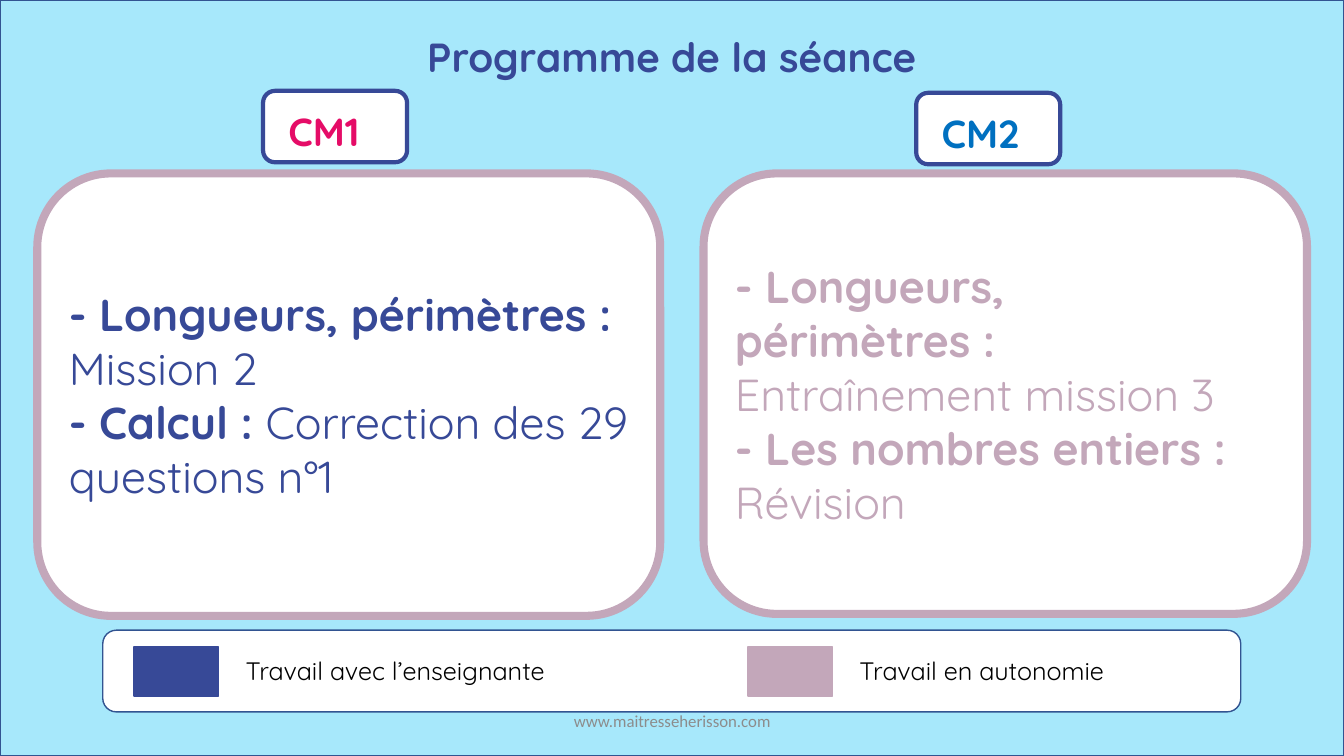
import pptx
import pptx.util
import pptx.dml.color
import pptx.enum.shapes
import pptx.enum.text

Cm = pptx.util.Cm
Pt = pptx.util.Pt
SHAPE = pptx.enum.shapes.MSO_SHAPE
ALIGN = pptx.enum.text.PP_ALIGN
ANCHOR = pptx.enum.text.MSO_ANCHOR

COLORS = {
    "sky": "A7E8FB",
    "border": "325491",
    "teacher": "374997",
    "alone": "C3A7BA",
    "white": "FFFFFF",
    "black": "000000",
    "cm1": "E50C67",
    "cm2": "0070C0",
    "footer": "8C8C8C",
}


def rgb(name):
    return pptx.dml.color.RGBColor.from_string(COLORS[name])


def add_panel(shapes, kind, box, fill, line, width):
    panel = shapes.add_shape(kind, *map(Cm, box))
    panel.shadow.inherit = False
    panel.fill.solid()
    panel.fill.fore_color.rgb = rgb(fill)
    panel.line.color.rgb = rgb(line)
    panel.line.width = Pt(width)
    return panel


def write(shape, paragraphs, color, size, align=ALIGN.LEFT, anchor=ANCHOR.TOP, font="Quicksand"):
    frame = shape.text_frame
    frame.word_wrap = True
    frame.vertical_anchor = anchor
    for index, spans in enumerate(paragraphs):
        para = frame.paragraphs[0] if index == 0 else frame.add_paragraph()
        para.alignment = align
        for text, bold in spans:
            span = para.add_run()
            span.text = text
            formats = {"name": font, "size": Pt(size), "bold": bold}
            for key, value in formats.items():
                setattr(span.font, key, value)
            span.font.color.rgb = rgb(color)


def add_label(shapes, box, text, color, size, bold=False, **options):
    label = shapes.add_textbox(*map(Cm, box))
    write(label, [[(text, bold)]], color, size, **options)


def add_level_tag(page, left, top, name, color):
    tag = page.shapes.add_group_shape().shapes
    add_panel(tag, SHAPE.ROUNDED_RECTANGLE, (left, top, 3.63, 1.8), "white", "teacher", 3)
    add_label(tag, (left + 0.39, top + 0.28, 2.8, 1.45), name, color, 28, True)


def add_program(page, box, tasks, color):
    card = add_panel(page.shapes, SHAPE.ROUNDED_RECTANGLE, box, "white", "alone", 5.75)
    paragraphs = [[(f"- {topic} : ", True), (work, False)] for topic, work in tasks]
    write(card, paragraphs, color, 32, anchor=ANCHOR.MIDDLE)


def add_legend(page, box, entries):
    left, top, width, height = box
    legend = page.shapes.add_group_shape().shapes
    add_panel(legend, SHAPE.ROUNDED_RECTANGLE, box, "white", "border", 1)
    for index, (color, text) in enumerate(entries):
        start = left + 0.79 + index * 15.47
        add_panel(legend, SHAPE.RECTANGLE, (start, top + 0.42, 2.13, 1.24), color, color, 1)
        add_label(legend, (start + 2.56, top + 0.51, 8.69, 1.02), text, "black", 18)


def main():
    deck = pptx.Presentation()
    deck.slide_width = Cm(33.87)
    deck.slide_height = Cm(19.05)
    page = deck.slides.add_slide(deck.slide_layouts[6])

    add_panel(page.shapes, SHAPE.RECTANGLE, (0, 0, 33.87, 19.05), "sky", "border", 1)
    add_label(page.shapes, (0, 0.69, 33.87, 1.5), "Programme de la séance",
              "teacher", 29, True, align=ALIGN.CENTER)

    add_level_tag(page, 6.63, 2.29, "CM1", "cm1")
    add_program(page, (0.94, 4.37, 15.7, 11.15), [
        ("Longueurs, périmètres", "Mission 2"),
        ("Calcul", "Correction des 29 questions n°1"),
    ], "teacher")

    add_level_tag(page, 23.09, 2.34, "CM2", "cm2")
    add_program(page, (17.73, 4.37, 15.21, 11.1), [
        ("Longueurs, périmètres", "Entraînement mission 3"),
        ("Les nombres entiers", "Révision"),
    ], "alone")

    add_legend(page, (2.59, 15.88, 28.68, 2.06), [
        ("teacher", "Travail avec l’enseignante"),
        ("alone", "Travail en autonomie"),
    ])
    add_label(page.shapes, (11.23, 17.65, 11.43, 1.02), "www.maitresseherisson.com",
              "footer", 12, align=ALIGN.CENTER, anchor=ANCHOR.MIDDLE, font="Calibri")

    deck.save("out.pptx")


if __name__ == "__main__":
    main()
